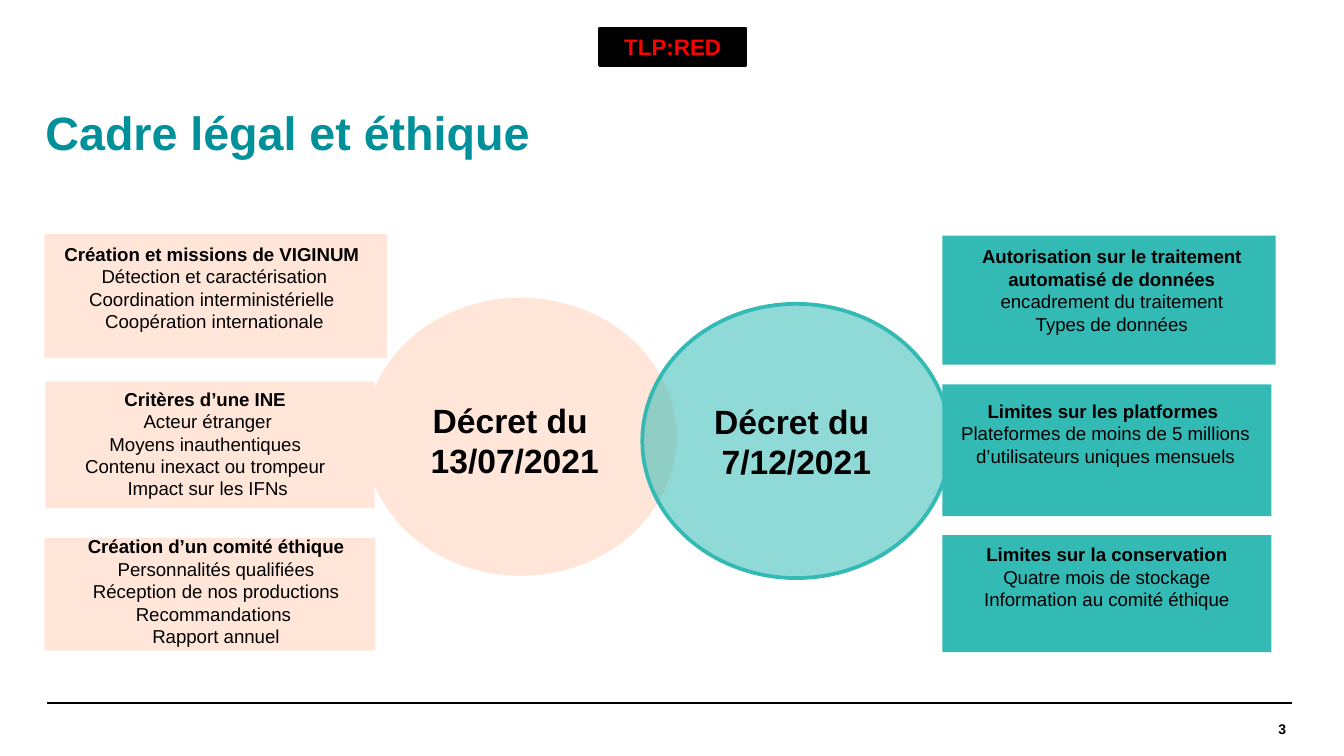
from lxml.etree import SubElement as Sub
from pptx import Presentation
from pptx.dml.color import RGBColor as Rgb
from pptx.enum.shapes import MSO_CONNECTOR as Link, MSO_SHAPE as Kind
from pptx.enum.text import MSO_ANCHOR as Anchor, PP_ALIGN as Align
from pptx.oxml.ns import qn
from pptx.util import Cm, Pt

HUES = {"ink": "000000", "red": "FF0000", "title": "009099",
        "peach": "FFE6D9", "teal": "34BAB5"}

TITLE = "Cadre légal et éthique"
LABEL = "TLP:RED"
PAGE = "3"

RULES = [(0.89, 24.31), (0.99, 24.41)]
BASE = 13.28

OVALS = [
    ("peach", 100, (6.93, 5.66), (7.09, 7.42, 5.28, 1.8),
     Anchor.TOP, ["Décret du ", "13/07/2021"]),
    ("teal", 55, (12.14, 5.74), (12.14, 5.74, 5.82, 5.18),
     Anchor.MIDDLE, ["Décret du ", "7/12/2021"]),
]
ROUND = (5.82, 5.18)

CARDS = [
    ("peach", (0.84, 4.42, 6.48, 2.34), (0.81, 4.45, 6.48, 2.82),
     ["Création et missions de VIGINUM ", "Détection et caractérisation",
      "Coordination interministérielle ", "Coopération internationale"]),
    ("peach", (0.86, 7.21, 6.22, 2.39), (0.56, 7.19, 6.73, 2.39),
     ["Critères d’une INE ", "Acteur étranger", "Moyens inauthentiques ",
      "Contenu inexact ou trompeur ", "Impact sur les IFNs"]),
    ("peach", (0.84, 10.16, 6.25, 2.13), (0.84, 9.98, 6.48, 2.39),
     ["Création d’un comité éthique", "Personnalités qualifiées",
      "Réception de nos productions", "Recommandations ", "Rapport annuel"]),
    ("teal", (17.81, 4.45, 6.3, 2.44), (18.24, 4.5, 5.54, 2.39),
     ["Autorisation sur le traitement automatisé de données",
      "encadrement du traitement", "Types de données"]),
    ("teal", (17.81, 7.26, 6.22, 2.49), (17.7, 7.42, 6.38, 1.96),
     ["Limites sur les platformes ",
      "Plateformes de moins de 5 millions d’utilisateurs uniques mensuels"]),
    ("teal", (17.81, 10.11, 6.22, 2.21), (18.16, 10.13, 5.51, 1.96),
     ["Limites sur la conservation", "Quatre mois de stockage",
      "Information au comité éthique"]),
]

deck = Presentation()
deck.slide_width, deck.slide_height = Cm(25.4), Cm(14.28)
slide = deck.slides.add_slide(deck.slide_layouts[6])
shapes = slide.shapes


def tint(hue):
    return Rgb.from_string(HUES[hue])


def write(lines, box, size=10, hue="ink", align=Align.CENTER,
          anchor=Anchor.TOP, pad=(0.25, 0.13), bold=None):
    frame = shapes.add_textbox(*map(Cm, box)).text_frame
    frame.word_wrap = True
    frame.vertical_anchor = anchor
    frame.margin_left = frame.margin_right = Cm(pad[0])
    frame.margin_top = frame.margin_bottom = Cm(pad[1])
    for n, line in enumerate(lines):
        para = frame.add_paragraph() if n else frame.paragraphs[0]
        para.alignment = align
        run = para.add_run()
        run.text = line
        font = run.font
        font.name, font.size = "Arial", Pt(size)
        font.bold = n < (bold or len(lines))
        font.color.rgb = tint(hue)


def draw(kind, box, hue, width=0, alpha=100):
    shape = shapes.add_shape(kind, *map(Cm, box))
    shape.shadow.inherit = False
    shape.fill.solid()
    shape.fill.fore_color.rgb = tint(hue)
    if alpha < 100:
        color = shape.fill._xPr.find(qn("a:solidFill"))[0]
        Sub(color, qn("a:alpha")).set("val", str(alpha * 1000))
    if width:
        shape.line.color.rgb = tint(hue)
        shape.line.width = Pt(width)
    else:
        shape.line.fill.background()


for left, right in RULES:
    rule = shapes.add_connector(Link.STRAIGHT, Cm(left), Cm(BASE), Cm(right), Cm(BASE))
    rule.line.color.rgb = tint("ink")
    rule.line.width = Pt(0.8)
    Sub(rule._element.spPr, qn("a:effectLst"))

write([PAGE], (20.55, BASE, 3.76, 0.99), size=7.5, align=Align.RIGHT,
      anchor=Anchor.MIDDLE, pad=(0, 0))
write([TITLE], (0.61, 1.83, 23.5, 1.32), size=25, hue="title", align=Align.LEFT)

for hue, alpha, spot, area, anchor, lines in OVALS:
    draw(Kind.OVAL, spot + ROUND, hue, width=2, alpha=alpha)
    write(lines, area, size=18, anchor=anchor)

for hue, box, area, lines in CARDS:
    draw(Kind.RECTANGLE, box, hue)
    write(lines, area, bold=1)

badge = (11.33, 0.53, 2.77, 0.71)
draw(Kind.RECTANGLE, badge, "ink", width=1.5)
write([LABEL], badge, size=12, hue="red", pad=(0.18, 0.1))

deck.save("out.pptx")
